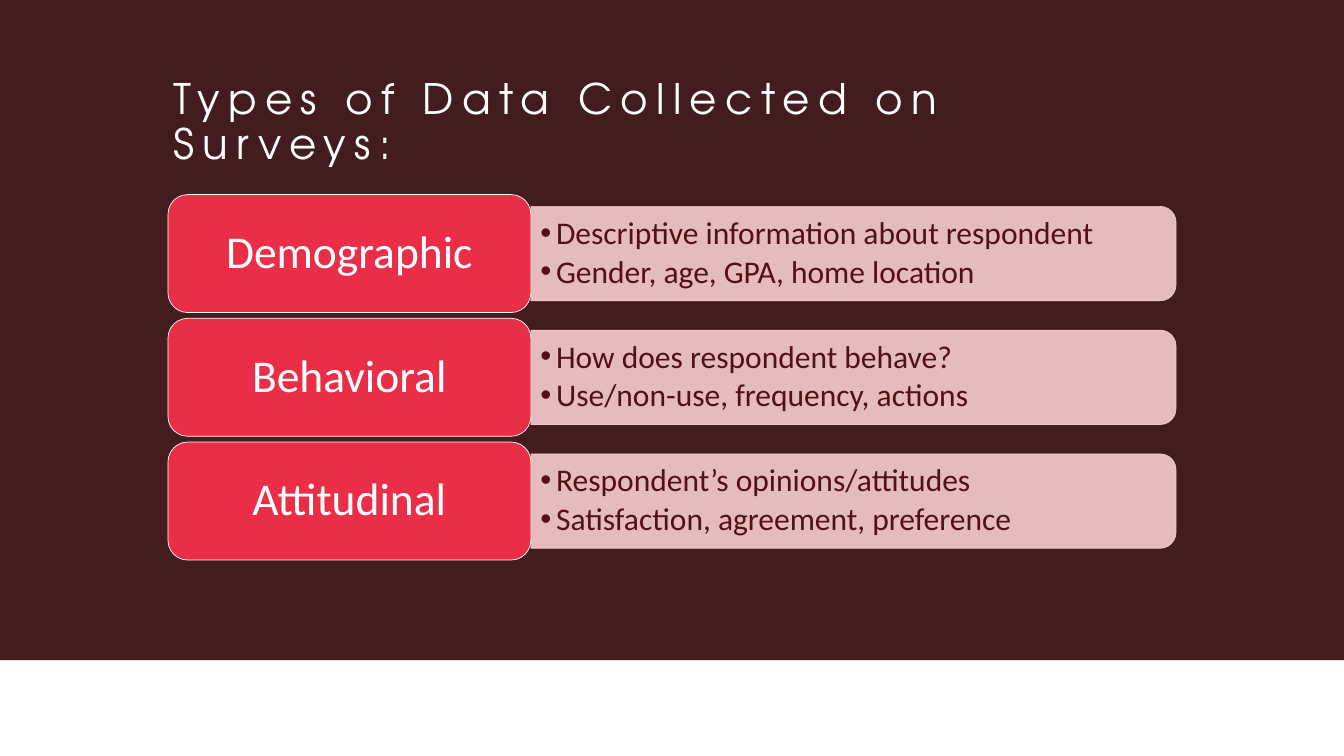
from dataclasses import dataclass

from lxml import etree
from pptx import Presentation
from pptx.dml.color import RGBColor
from pptx.enum.shapes import MSO_SHAPE
from pptx.enum.text import MSO_ANCHOR, MSO_AUTO_SIZE, PP_ALIGN
from pptx.oxml.ns import qn
from pptx.util import Pt

RECTANGLE = MSO_SHAPE.RECTANGLE
ROUNDED = MSO_SHAPE.ROUNDED_RECTANGLE
TOP_ROUNDED = MSO_SHAPE.ROUND_2_SAME_RECTANGLE
TOP, MIDDLE = MSO_ANCHOR.TOP, MSO_ANCHOR.MIDDLE
LEFT, CENTER = PP_ALIGN.LEFT, PP_ALIGN.CENTER
NO_AUTOFIT = MSO_AUTO_SIZE.NONE

WHITE, MAROON, RED = "FFFFFF", "431C1D", "EB2E47"
PINK, DARK_RED = "F7CDCF", "501214"
BODY_FONT, TITLE_FONT = "Calibri", "TeX Gyre Adventor"

MARGIN = 240
FIRST_TOP = 278
ROW_PITCH = 176.8
LABEL_WIDTH, LABEL_HEIGHT = 518.4, 168.5
PANEL_WIDTH, PANEL_HEIGHT = 921.6, 134.8
LIST_WIDTH, LIST_HEIGHT = 915, 121.7
BULLET_INDENT = 22.5


@dataclass(frozen=True)
class DataType:
    name: str
    details: tuple[str, ...]


DATA_TYPES = (
    DataType("Demographic", ("Descriptive information about respondent",
                             "Gender, age, GPA, home location")),
    DataType("Behavioral", ("How does respondent behave?",
                            "Use/non-use, frequency, actions")),
    DataType("Attitudinal", ("Respondent’s opinions/attitudes",
                             "Satisfaction, agreement, preference")),
)


def color(value: str) -> RGBColor:
    return RGBColor.from_string(value)


def add_box(slide, kind, left: float, top: float, width: float, height: float,
            fill: str, line: str | None = None):
    shape = slide.shapes.add_shape(kind, Pt(left), Pt(top), Pt(width), Pt(height))
    shape.shadow.inherit = False
    shape.fill.solid()
    shape.fill.fore_color.rgb = color(fill)
    if line:
        shape.line.color.rgb = color(line)
        shape.line.width = Pt(1)
    else:
        shape.line.fill.background()
    return shape


def set_opacity(shape, percent: int) -> None:
    for element in shape._element.spPr.iter(qn("a:srgbClr")):
        etree.SubElement(element, qn("a:alpha"), val=str(percent * 1000))


def format_frame(frame, anchor, horizontal: float, vertical: float) -> None:
    frame.word_wrap = True
    frame.auto_size = NO_AUTOFIT
    frame.vertical_anchor = anchor
    frame.margin_left = frame.margin_right = Pt(horizontal)
    frame.margin_top = frame.margin_bottom = Pt(vertical)


def format_paragraph(paragraph, size: float, font: str, text_color: str, alignment) -> None:
    paragraph.alignment = alignment
    paragraph.line_spacing = 0.9
    paragraph.font.size = Pt(size)
    paragraph.font.name = font
    paragraph.font.color.rgb = color(text_color)


def add_bullet(paragraph) -> None:
    properties = paragraph._p.get_or_add_pPr()
    properties.set("marL", str(Pt(BULLET_INDENT)))
    properties.set("indent", str(-Pt(BULLET_INDENT)))
    etree.SubElement(properties, qn("a:buFont"), typeface="Arial")
    etree.SubElement(properties, qn("a:buChar"), char="•")


def add_title(slide, text: str) -> None:
    title = slide.shapes.title
    title.left, title.top, title.width, title.height = Pt(MARGIN), Pt(108), Pt(1440), Pt(90)
    format_frame(title.text_frame, TOP, 7.2, 3.6)
    paragraph = title.text_frame.paragraphs[0]
    run = paragraph.add_run()
    run.text = text
    run._r.get_or_add_rPr().set("spc", "1200")
    format_paragraph(paragraph, 60, TITLE_FONT, WHITE, LEFT)


def add_panel(slide, left: float, middle: float) -> None:
    center = left + PANEL_WIDTH / 2
    panel = add_box(slide, TOP_ROUNDED, center - PANEL_HEIGHT / 2, middle - PANEL_WIDTH / 2,
                    PANEL_HEIGHT, PANEL_WIDTH, PINK, PINK)
    panel.rotation = 90
    set_opacity(panel, 90)


def add_list(slide, items: tuple[str, ...], left: float, middle: float) -> None:
    box = slide.shapes.add_textbox(Pt(left), Pt(middle - LIST_HEIGHT / 2),
                                   Pt(LIST_WIDTH), Pt(LIST_HEIGHT))
    frame = box.text_frame
    format_frame(frame, MIDDLE, 13.5, 6.75)
    for index, item in enumerate(items):
        paragraph = frame.add_paragraph() if index else frame.paragraphs[0]
        paragraph.text = item
        add_bullet(paragraph)
        format_paragraph(paragraph, 45, BODY_FONT, DARK_RED, LEFT)
        paragraph.space_after = Pt(6.75)


def add_label(slide, text: str, top: float) -> None:
    label = add_box(slide, ROUNDED, MARGIN, top, LABEL_WIDTH, LABEL_HEIGHT, RED, WHITE)
    format_frame(label.text_frame, MIDDLE, 19.5, 10)
    paragraph = label.text_frame.paragraphs[0]
    paragraph.text = text
    format_paragraph(paragraph, 65, BODY_FONT, WHITE, CENTER)


def add_row(slide, data_type: DataType, top: float) -> None:
    panel_left = MARGIN + LABEL_WIDTH
    middle = top + LABEL_HEIGHT / 2
    add_panel(slide, panel_left, middle)
    add_list(slide, data_type.details, panel_left, middle)
    add_label(slide, data_type.name, top)


def main() -> None:
    presentation = Presentation()
    presentation.slide_width, presentation.slide_height = Pt(1920), Pt(1080)
    slide = presentation.slides.add_slide(presentation.slide_layouts[5])
    backdrop = add_box(slide, RECTANGLE, 0, 0, 1920, 943, MAROON)
    slide.shapes.title._element.addprevious(backdrop._element)
    add_title(slide, "Types of Data Collected on Surveys:")
    for index, data_type in enumerate(DATA_TYPES):
        add_row(slide, data_type, FIRST_TOP + index * ROW_PITCH)
    presentation.save("out.pptx")


if __name__ == "__main__":
    main()
